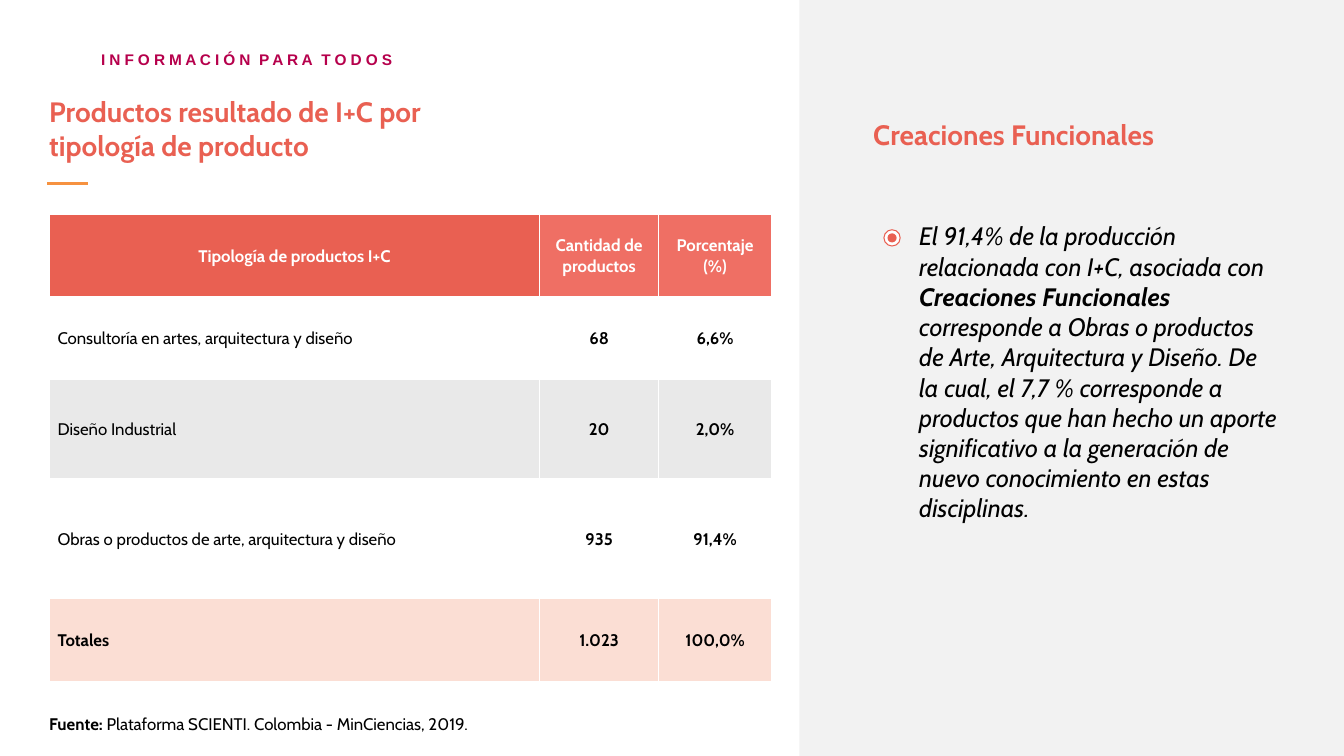
from dataclasses import dataclass
from typing import NamedTuple

import pptx
import pptx.dml.color
import pptx.enum.shapes
import pptx.enum.text
import pptx.oxml
import pptx.oxml.ns
import pptx.util

Cm, Pt = pptx.util.Cm, pptx.util.Pt
ALIGN = pptx.enum.text.PP_ALIGN
SHAPE = pptx.enum.shapes.MSO_SHAPE


@dataclass(frozen=True)
class Theme:
    coral: str = "E96052"
    light_coral: str = "EF6F64"
    peach: str = "FBDED4"
    orange: str = "F69240"
    magenta: str = "B6004C"
    panel: str = "F2F2F2"
    band: str = "E9E9E9"
    white: str = "FFFFFF"
    black: str = "000000"
    font: str = "Cabin"
    tag_font: str = "Arial"
    heading_size: int = 20
    body_size: int = 18
    small_size: int = 12
    tag_size: int = 11


class Box(NamedTuple):
    """A region, in centimetres."""
    left: float
    top: float
    width: float
    height: float

    def inner(self, dx, dy, width, height):
        return Box(self.left + dx, self.top + dy, width, height)

    def lengths(self):
        return [Cm(value) for value in self]


THEME = Theme()
SLIDE = Box(0, 0, 33.86, 19.05)
INSET = (0.33, 0.18, 0.33, 0.18)
HEADING = dict(size=Pt(THEME.heading_size), bold=True, color=THEME.coral)
BODY = dict(size=Pt(THEME.body_size), italic=True, color=THEME.black)
SMALL = dict(size=Pt(THEME.small_size), color=THEME.black)


def rgb(value):
    return pptx.dml.color.RGBColor.from_string(value)


def add_run(paragraph, text, **formats):
    run = paragraph.add_run()
    run.text = text
    for name, value in {"name": THEME.font, **formats}.items():
        if name == "color":
            run.font.color.rgb = rgb(value)
        else:
            setattr(run.font, name, value)
    return run


def add_text(slide, box, lines, margins=(0, 0, 0, 0)):
    """Each line is a list of (text, formats) runs."""
    frame = slide.shapes.add_textbox(*box.lengths()).text_frame
    frame.word_wrap = True
    for side, margin in zip(("left", "top", "right", "bottom"), margins):
        setattr(frame, f"margin_{side}", Cm(margin))
    for index, line in enumerate(lines):
        paragraph = frame.add_paragraph() if index else frame.paragraphs[0]
        for text, formats in line:
            add_run(paragraph, text, **formats)
    return frame


def add_filled(shapes, kind, box, fill, line=None):
    shape = shapes.add_shape(kind, *box.lengths())
    shape.shadow.inherit = False
    shape.fill.solid()
    shape.fill.fore_color.rgb = rgb(fill)
    if line:
        shape.line.color.rgb = rgb(line)
        shape.line.width = Pt(0.75)
    else:
        shape.line.fill.background()


def add_tag(slide, box):
    """Letter-spaced section label; the gap between words is tracked wider."""
    frame = add_text(slide, box, [[]], (0, 0.1, 0, 0))
    paragraph = frame.paragraphs[0]
    paragraph.alignment = ALIGN.JUSTIFY
    paragraph.line_spacing = 1.3
    formats = dict(name=THEME.tag_font, size=Pt(THEME.tag_size), bold=True,
                   color=THEME.magenta)
    for index, word in enumerate(("I N F O R M A C I Ó N", "P A R A", "T O D O S")):
        if index:
            gap = add_run(paragraph, " ", **formats)
            gap.font._element.set("spc", "300")
        letters = add_run(paragraph, word, **formats)
        letters.font._element.set("spc", "-10")


def add_title(slide, box):
    add_text(slide, box.inner(0.05, 0, box.width, 1.7),
             [[("Productos resultado de I+C por", HEADING)],
              [("tipología de producto", HEADING)]])
    x, y = Cm(box.left), Cm(box.top + box.height)
    rule = slide.shapes.add_connector(
        pptx.enum.shapes.MSO_CONNECTOR.STRAIGHT, x, y, x + Cm(1.02), y)
    rule.line.color.rgb = rgb(THEME.orange)
    rule.line.width = Pt(2.25)
    rule._element.spPr.append(pptx.oxml.parse_xml(
        f'<a:effectLst {pptx.oxml.ns.nsdecls("a")}/>'))


def add_borders(cell):
    properties = cell._tc.get_or_add_tcPr()
    for index, side in enumerate(("lnL", "lnR", "lnT", "lnB")):
        properties.insert(index, pptx.oxml.parse_xml(
            f'<a:{side} {pptx.oxml.ns.nsdecls("a")} w="12700"><a:solidFill>'
            f'<a:srgbClr val="{THEME.white}"/></a:solidFill></a:{side}>'))


def add_product_table(slide, box):
    widths = (4.86, 1.18, 1.12)
    heights = (0.82, 0.82, 0.98, 1.19, 0.82)
    products = (
        ("Tipología de productos I+C", "Cantidad de productos", "Porcentaje (%)"),
        ("Consultoría en artes, arquitectura y diseño", "68", "6,6%"),
        ("Diseño Industrial", "20", "2,0%"),
        ("Obras o productos de arte, arquitectura y diseño", "935", "91,4%"),
        ("Totales", "1.023", "100,0%"),
    )
    row_fills = (THEME.light_coral, THEME.white, THEME.band, THEME.white, THEME.peach)
    table = slide.shapes.add_table(len(products), len(widths), *box.lengths()).table
    table.first_row = table.horz_banding = False
    for column, width in zip(table.columns, widths):
        column.width = Cm(box.width * width / sum(widths))
    for row, height in zip(table.rows, heights):
        row.height = Cm(box.height * height / sum(heights))
    last = len(products) - 1
    for r, product in enumerate(products):
        for c, text in enumerate(product):
            cell = table.cell(r, c)
            cell.vertical_anchor = pptx.enum.text.MSO_ANCHOR.MIDDLE
            cell.margin_left = cell.margin_right = Cm(0.2)
            cell.margin_top, cell.margin_bottom = Cm(0.02), 0
            cell.fill.solid()
            cell.fill.fore_color.rgb = rgb(THEME.coral if r == c == 0 else row_fills[r])
            add_borders(cell)
            paragraph = cell.text_frame.paragraphs[0]
            paragraph.alignment = ALIGN.CENTER if r == 0 or c else ALIGN.LEFT
            add_run(paragraph, text, size=Pt(THEME.small_size),
                    bold=r in (0, last) or c > 0,
                    color=THEME.black if r else THEME.white)


def add_source(slide, box):
    add_text(slide, box, [[
        ("Fuente: ", {**SMALL, "bold": True}),
        ("Plataforma SCIENTI. Colombia - MinCiencias, 2019.", SMALL)]], INSET)


def add_findings_panel(slide, box):
    add_filled(slide.shapes, SHAPE.RECTANGLE, box, THEME.panel)
    # Ringed marker beside the finding
    marker = slide.shapes.add_group_shape().shapes
    add_filled(marker, SHAPE.OVAL, box.inner(2.13, 5.79, 0.41, 0.41),
               THEME.white, THEME.coral)
    add_filled(marker, SHAPE.OVAL, box.inner(2.22, 5.88, 0.23, 0.23), THEME.coral)
    # Heading and finding
    add_text(slide, box.inner(1.86, 2.97, 9.7, 0.86),
             [[("Creaciones Funcionales", HEADING)]])
    add_text(slide, box.inner(2.69, 5.38, 9.73, 8.81), [[
        ("El 91,4% de la producción relacionada con I+C, asociada con ", BODY),
        ("Creaciones Funcionales ", {**BODY, "bold": True}),
        ("corresponde a Obras o productos de Arte, Arquitectura y Diseño. "
         "De la cual, el 7,7 % corresponde a productos que han hecho un aporte "
         "significativo a la generación de nuevo conocimiento en estas "
         "disciplinas.", BODY)]], INSET)


def main():
    deck = pptx.Presentation()
    deck.slide_width, deck.slide_height = Cm(SLIDE.width), Cm(SLIDE.height)
    slide = deck.slides.add_slide(deck.slide_layouts[6])
    add_tag(slide, Box(2.55, 1.02, 10.4, 0.64))
    add_findings_panel(slide, Box(20.14, 0, 13.72, SLIDE.height))
    add_title(slide, Box(1.19, 2.39, 18, 2.23))
    add_product_table(slide, Box(1.25, 5.4, 18.19, 11.77))
    add_source(slide, Box(0.91, 17.8, 16.71, 0.86))
    deck.save("out.pptx")


if __name__ == "__main__":
    main()
